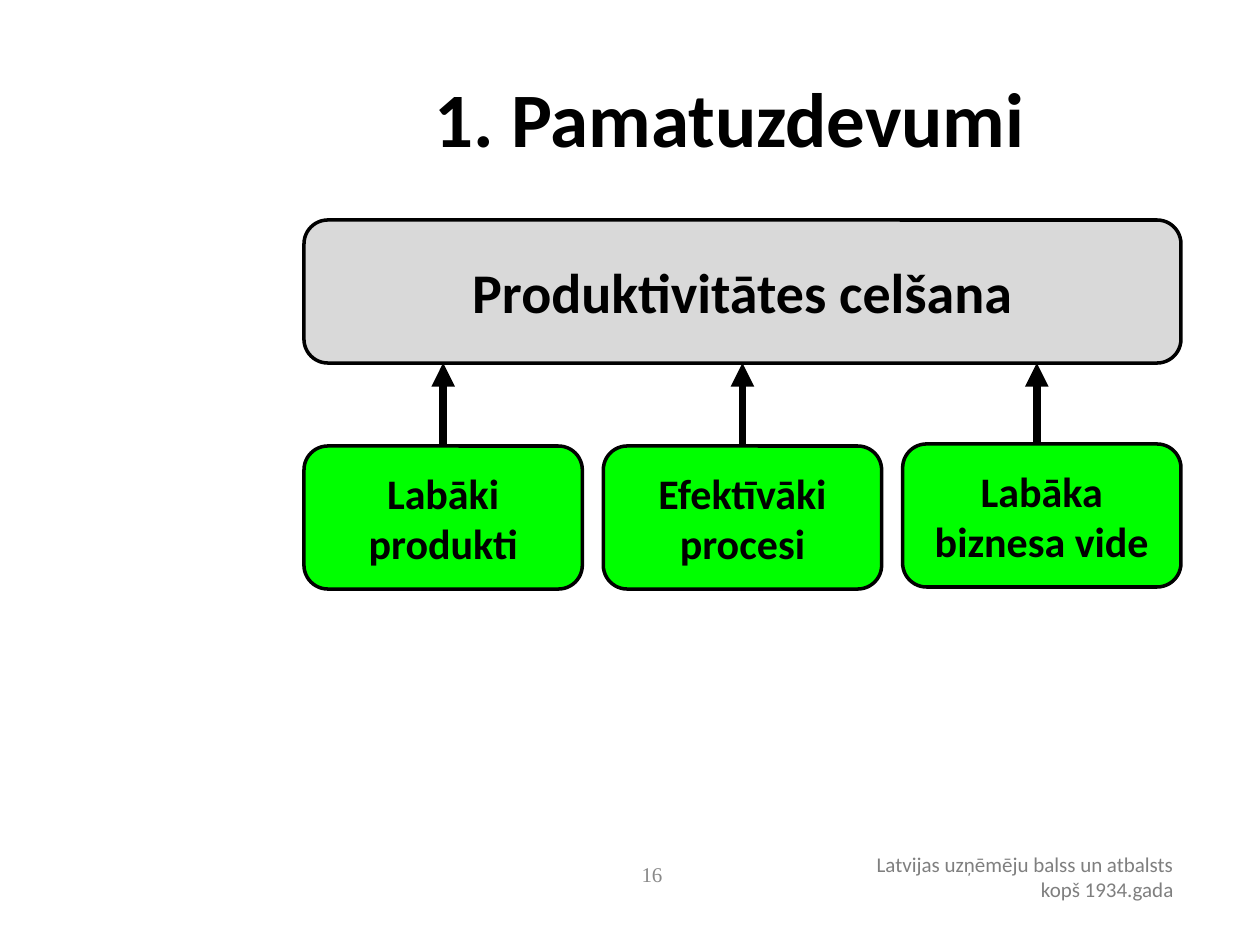
from lxml import etree
from pptx import Presentation
from pptx.dml.color import RGBColor
from pptx.enum.shapes import MSO_CONNECTOR, MSO_SHAPE
from pptx.enum.text import MSO_ANCHOR, PP_ALIGN
from pptx.oxml.ns import qn
from pptx.util import Emu, Pt

PX = 914400 // 126
STRAIGHT = MSO_CONNECTOR.STRAIGHT
ROUNDED, RECT = MSO_SHAPE.ROUNDED_RECTANGLE, MSO_SHAPE.RECTANGLE
MIDDLE, TOP_ANCHOR = MSO_ANCHOR.MIDDLE, MSO_ANCHOR.TOP
CENTER, RIGHT = PP_ALIGN.CENTER, PP_ALIGN.RIGHT
TOP, BOTTOM = 0, 2
BLACK, WHITE, GREEN, GREY = "000000", "FFFFFF", "00FF00", "D9D9D9"
DRIVERS = [("Labāki produkti", 2, 0), ("Efektīvāki procesi", 2, 0),
           ("Labāka biznesa vide", 0, -5)]


def px(*lengths):
    """Turn pixel lengths into EMU."""
    return [Emu(round(n * PX)) for n in lengths]


def color(fmt, value):
    """Give a fill or line format a solid hex colour."""
    fill = getattr(fmt, "fill", fmt)
    fill.solid()
    fill.fore_color.rgb = RGBColor.from_string(value)


def write(sp, text, size, ink=BLACK, bold=False, align=CENTER, anchor=MIDDLE, font="Calibri"):
    """Put one styled paragraph into a shape."""
    tf = sp.text_frame
    tf.word_wrap = True
    tf.vertical_anchor = anchor
    p = tf.paragraphs[0]
    p.text = text
    p.alignment = align
    p.font.name, p.font.size, p.font.bold = font, Pt(size), bold
    color(p.font, ink)


def add_box(s, shape, box, fill):
    """Add a filled preset shape without shadow or outline."""
    sp = s.shapes.add_shape(shape, *px(*box))
    sp.shadow.inherit = False
    color(sp.fill, fill)
    sp.line.fill.background()
    return sp


def add_card(s, box, text, size, fill):
    """Add an outlined rounded card with bold text."""
    sp = add_box(s, ROUNDED, box, fill)
    color(sp.line, BLACK)
    sp.line.width = Pt(2)
    write(sp, text, size, bold=True)
    return sp


def add_arrow(s, x, y1, y2):
    """Add a thick vertical arrow pointing to y2."""
    c = s.shapes.add_connector(STRAIGHT, *px(x, y1, x, y2))
    color(c.line, BLACK)
    c.line.width = Pt(4.5)
    etree.SubElement(c.line._get_or_add_ln(), qn("a:tailEnd"), type="triangle")
    etree.SubElement(c._element.spPr, qn("a:effectLst"))
    return c


def add_title(s, box):
    """Add the slide title."""
    write(s.shapes.add_textbox(*px(*box)), "1. Pamatuzdevumi ", 44, bold=True)


def add_diagram(s, x, y, w, h):
    """Add the goal card with a row of drivers pointing up to it."""
    card_h, row_y, gap = 143, h - 145, 21
    card_w = (w - gap * (len(DRIVERS) - 1)) / len(DRIVERS)
    goal = add_card(s, (x, y, w, card_h), "Produktivitātes celšana", 32, GREY)
    for i, (text, drop, shift) in enumerate(DRIVERS):
        left = x + i * (card_w + gap)
        top = y + row_y + drop
        card = add_card(s, (left, top, card_w, card_h), text, 24, GREEN)
        middle = left + card_w / 2
        arrow = add_arrow(s, middle + shift, top, y + card_h)
        if not shift:
            arrow.begin_connect(card, TOP)
        if i == len(DRIVERS) // 2:
            arrow.end_connect(goal, BOTTOM)


def add_footer(s, x, y, w, h):
    """Add the slide number and the motto at the right."""
    motto = add_box(s, RECT, (x + w - 328, y, 328, h), WHITE)
    write(motto, "Latvijas uzņēmēju balss un atbalsts kopš 1934.gada", 12,
          "7F7F7F", align=RIGHT, anchor=TOP_ANCHOR)
    number = s.shapes.add_textbox(*px(x, y + 4, 294, 50))
    write(number, "16", 12, "898989", font="Times New Roman")


def main():
    """Build and save the slide."""
    prs = Presentation()
    prs.slide_width, prs.slide_height = px(1260, 945)
    s = prs.slides.add_slide(prs.slide_layouts[6])
    add_title(s, (302, 38, 873, 158))
    add_diagram(s, 304, 220, 877, 369)
    add_footer(s, 505, 845, 681, 64)
    prs.save("out.pptx")


if __name__ == "__main__":
    main()
